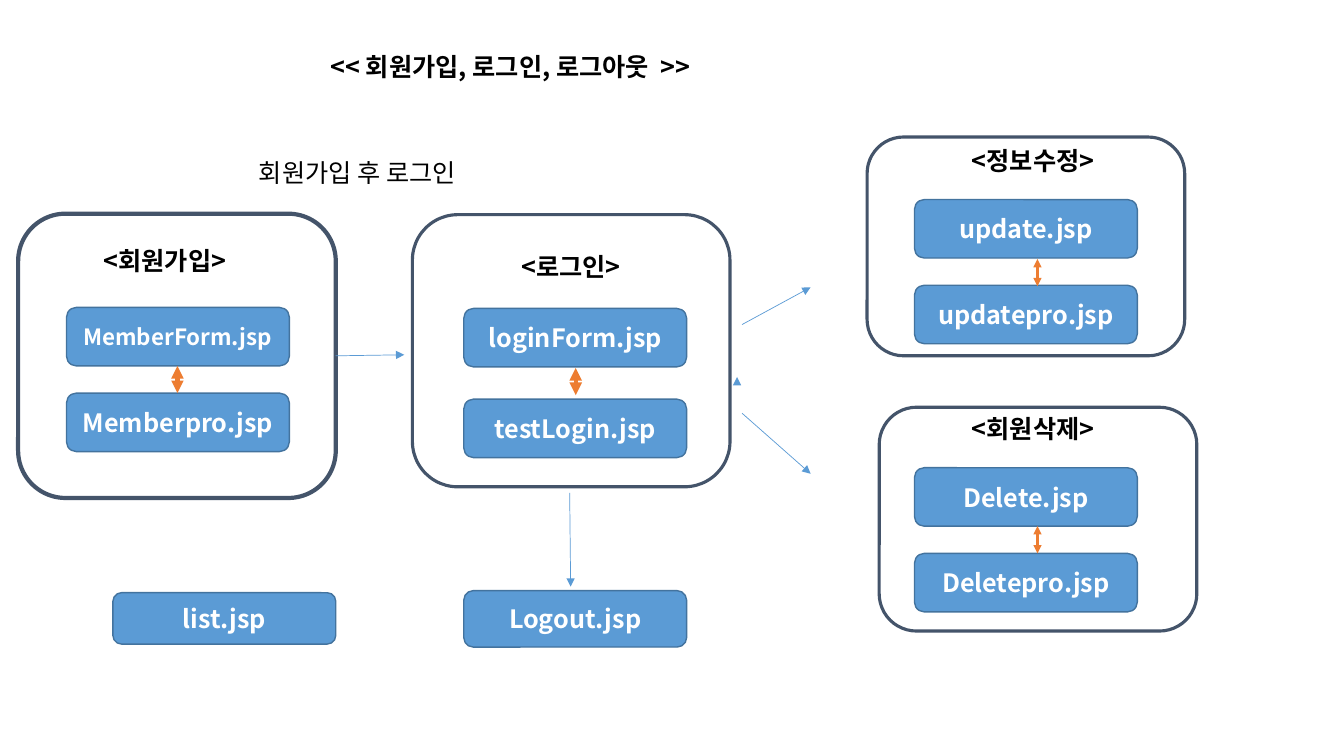
from lxml import etree
from pptx import Presentation
from pptx.dml.color import RGBColor
from pptx.enum import shapes, text
from pptx.oxml import ns
from pptx.util import Inches, Pt

FONT = "Noto Sans CJK KR"
COLORS = {
    "page": "5B9BD5",
    "page_edge": "43739E",
    "frame": "44546A",
    "exchange": "ED7D31",
    "ink": "000000",
    "white": "FFFFFF",
}
PAGE_WIDTH = 2.21
PAGE_HEIGHT = 0.58
FRAME_WIDTH = 3.15


def color(key):
    return RGBColor.from_string(COLORS[key])


def write(frame, words, ink, size=18, bold=True):
    frame.text = words
    for run in frame.paragraphs[0].runs:
        run.font.name = FONT
        run.font.size = Pt(size)
        run.font.bold = bold
        run.font.color.rgb = color(ink)
        east_asian = etree.SubElement(run.font._element, ns.qn("a:ea"))
        east_asian.set("typeface", FONT)


def add_rounded(slide, left, top, width, height, edge, weight):
    rounded = slide.shapes.add_shape(
        shapes.MSO_SHAPE.ROUNDED_RECTANGLE,
        Inches(left), Inches(top), Inches(width), Inches(height),
    )
    rounded.shadow.inherit = False
    rounded.line.color.rgb = color(edge)
    rounded.line.width = Pt(weight)
    return rounded


def add_page(slide, filename, left, top, height=PAGE_HEIGHT, size=18):
    page = add_rounded(slide, left, top, PAGE_WIDTH, height, "page_edge", 1)
    page.fill.solid()
    page.fill.fore_color.rgb = color("page")
    page.text_frame.vertical_anchor = text.MSO_ANCHOR.MIDDLE
    write(page.text_frame, filename, "white", size)
    page.text_frame.paragraphs[0].alignment = text.PP_ALIGN.CENTER


def add_frame(slide, left, top, height, weight=2.25):
    frame = add_rounded(slide, left, top, FRAME_WIDTH, height, "frame", weight)
    frame.fill.background()


def add_label(slide, words, left, top, width=PAGE_WIDTH, bold=True):
    label = slide.shapes.add_textbox(
        Inches(left), Inches(top), Inches(width), Inches(0.4)
    )
    label.text_frame.word_wrap = True
    label.text_frame.auto_size = text.MSO_AUTO_SIZE.SHAPE_TO_FIT_TEXT
    write(label.text_frame, words, "ink", bold=bold)


def add_arrow(slide, start, end, stroke="page", weight=0.5, ends=("tailEnd",)):
    arrow = slide.shapes.add_connector(
        shapes.MSO_CONNECTOR.STRAIGHT, *map(Inches, start + end)
    )
    arrow.line.color.rgb = color(stroke)
    arrow.line.width = Pt(weight)
    for end_tag in ends:
        tip = etree.SubElement(arrow.line._get_or_add_ln(), ns.qn(f"a:{end_tag}"))
        tip.set("type", "triangle")
    etree.SubElement(arrow._element.spPr, ns.qn("a:effectLst"))


def add_exchange(slide, x, top, weight):
    add_arrow(slide, (x, top), (x, top + 0.27), "exchange", weight,
              ("headEnd", "tailEnd"))


def main():
    deck = Presentation()
    deck.slide_width = Inches(13.33)
    deck.slide_height = Inches(7.5)
    slide = deck.slides.add_slide(deck.slide_layouts[6])

    add_label(slide, "<< 회원가입, 로그인, 로그아웃  >>", 3.18, 0.46, 8.25)
    add_label(slide, "회원가입 후 로그인", 2.47, 1.51, 4.05, bold=False)

    for filename, left, top, height, size in (
        ("MemberForm.jsp", 0.66, 3.05, PAGE_HEIGHT, 16),
        ("Memberpro.jsp", 0.66, 3.9, PAGE_HEIGHT, 18),
        ("loginForm.jsp", 4.6, 3.06, PAGE_HEIGHT, 18),
        ("testLogin.jsp", 4.6, 3.96, PAGE_HEIGHT, 18),
        ("update.jsp", 9.07, 1.98, PAGE_HEIGHT, 18),
        ("updatepro.jsp", 9.07, 2.83, PAGE_HEIGHT, 18),
        ("Delete.jsp", 9.07, 4.64, PAGE_HEIGHT, 18),
        ("Deletepro.jsp", 9.07, 5.49, PAGE_HEIGHT, 18),
        ("list.jsp", 1.12, 5.88, 0.51, 18),
        ("Logout.jsp", 4.6, 5.86, 0.56, 18),
    ):
        add_page(slide, filename, left, top, height, size)

    for left, top, height, weight in (
        (0.18, 2.12, 2.82, 3),
        (4.09, 2.13, 2.7, 2.25),
        (8.6, 1.36, 2.17, 2.25),
        (8.72, 4.04, 2.22, 2.25),
    ):
        add_frame(slide, left, top, height, weight)

    for heading, left, top in (
        ("<회원가입>", 0.93, 2.38),
        ("<로그인>", 5.07, 2.44),
        ("<정보수정>", 9.54, 1.39),
        ("<회원삭제>", 9.54, 4.05),
    ):
        add_label(slide, heading, left, top)

    for x, top, weight in (
        (1.76, 3.63, 3),
        (5.71, 3.65, 3),
        (10.29, 2.57, 1.5),
        (10.29, 5.22, 1.5),
    ):
        add_exchange(slide, x, top, weight)

    for start, end in (
        ((3.33, 3.53), (4.01, 3.52)),
        ((7.36, 3.22), (8.04, 2.85)),
        ((7.31, 3.76), (7.31, 3.74)),
        ((7.36, 4.1), (8.04, 4.7)),
        ((5.65, 4.89), (5.66, 5.82)),
    ):
        add_arrow(slide, start, end)

    deck.save("out.pptx")


if __name__ == "__main__":
    main()
